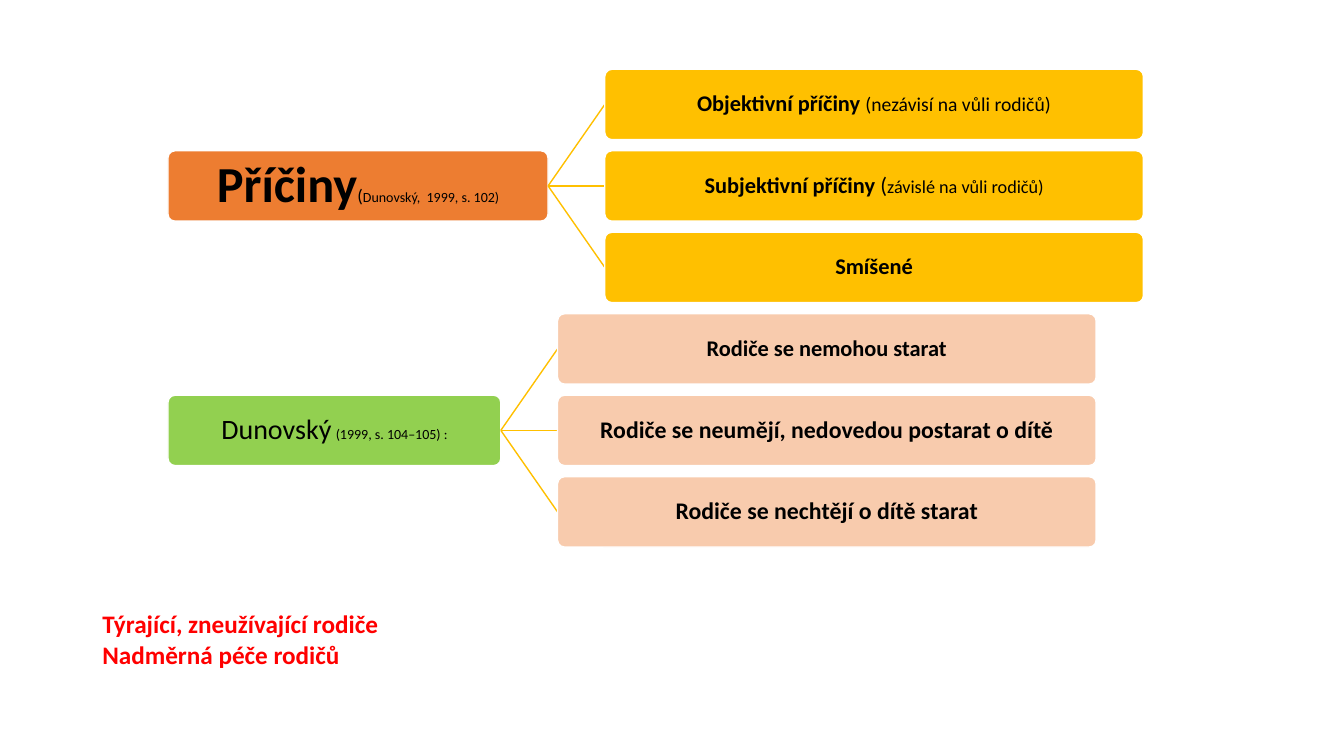
from lxml import etree
from pptx import Presentation
from pptx.dml.color import RGBColor
from pptx.enum.shapes import MSO_CONNECTOR as CONN, MSO_SHAPE as SHAPE
from pptx.enum.text import MSO_ANCHOR as ANCHOR, PP_ALIGN as ALIGN
from pptx.oxml.ns import qn
from pptx.util import Pt

ORANGE = RGBColor(0xED, 0x7D, 0x31)
GOLD = RGBColor(0xFF, 0xC0, 0x00)
GREEN = RGBColor(0x92, 0xD0, 0x50)
PEACH = RGBColor(0xF8, 0xCB, 0xAD)
BLACK = RGBColor(0, 0, 0)
WHITE = RGBColor(0xFF, 0xFF, 0xFF)
RED = RGBColor(0xFF, 0, 0)

TREES = [
    {
        "root": [("Příčiny", 36, True), ("(", 13, False),
                 ("Dunovský,  1999, s. 102)", 10, False)],
        "root_width": 362, "root_fill": ORANGE, "branch_fill": GOLD,
        "branches": [
            [("Objektivní příčiny ", 16, True),
             ("(nezávisí na vůli rodičů)", 14, False)],
            [("Subjektivní příčiny", 16, True), (" (", 16, False),
             ("závislé na vůli rodičů)", 13, False)],
            [("Smíšené", 16, True)],
        ],
    },
    {
        "root": [("Dunovský", 20, False), (" ", 13, False),
                 ("(1999, s. 104–105) :", 10, False)],
        "root_width": 317, "root_fill": GREEN, "branch_fill": PEACH,
        "branches": [
            [("Rodiče se nemohou starat", 16, True)],
            [("Rodiče se neumějí, nedovedou postarat o dítě", 17, True)],
            [("Rodiče se nechtějí o dítě starat", 17, True)],
        ],
    },
]
NOTES = ["Týrající, zneužívající rodiče", "Nadměrná péče rodičů"]

FONT = "Calibri"
LEFT, TOP = 160, 66
BOX_HEIGHT, BRANCH_WIDTH = 67, 513
LINK_WIDTH = 54
ROW_STEP = 388 / 5


def px(n):
    return round(n * 9525)


def add_box(s, x, y, width, fill, runs):
    sp = s.shapes.add_shape(SHAPE.ROUNDED_RECTANGLE, px(x), px(y),
                            px(width), px(BOX_HEIGHT))
    sp.adjustments[0] = 0.1
    sp.shadow.inherit = False
    sp.fill.solid()
    sp.fill.fore_color.rgb = fill
    sp.line.color.rgb = WHITE
    sp.line.width = Pt(1)
    tf = sp.text_frame
    tf.word_wrap = True
    tf.vertical_anchor = ANCHOR.MIDDLE
    tf.margin_left = tf.margin_right = tf.margin_top = tf.margin_bottom = px(1)
    p = tf.paragraphs[0]
    p.alignment = ALIGN.CENTER
    p.line_spacing = 0.9
    p.font.name = FONT
    p.font.color.rgb = BLACK
    for text, size, bold in runs:
        r = p.add_run()
        r.text = text
        r.font.name = FONT
        r.font.color.rgb = BLACK
        r.font.size = Pt(size)
        r.font.bold = bold


def add_link(s, x, y, end_y):
    link = s.shapes.add_connector(CONN.STRAIGHT, px(x), px(y),
                                  px(x + LINK_WIDTH), px(end_y))
    link.line.color.rgb = GOLD
    link.line.width = Pt(1)
    etree.SubElement(link._element.spPr, qn("a:effectLst"))


def add_tree(s, tree, first_row):
    rows = [TOP + (first_row + i) * ROW_STEP for i in range(len(tree["branches"]))]
    root_y = (rows[0] + rows[-1]) / 2
    link_x = LEFT + tree["root_width"]
    half = BOX_HEIGHT / 2
    add_box(s, LEFT, root_y, tree["root_width"], tree["root_fill"], tree["root"])
    for y, runs in zip(rows, tree["branches"]):
        add_link(s, link_x, root_y + half, y + half)
        add_box(s, link_x + LINK_WIDTH, y, BRANCH_WIDTH, tree["branch_fill"], runs)


def add_notes(s):
    tf = s.shapes.add_textbox(px(88), px(575), px(640), px(68)).text_frame
    tf.word_wrap = True
    for i, text in enumerate(NOTES):
        p = tf.add_paragraph() if i else tf.paragraphs[0]
        p.text = text
        p.font.name = FONT
        p.font.size = Pt(18)
        p.font.bold = True
        p.font.color.rgb = RED


def main():
    prs = Presentation()
    prs.slide_width, prs.slide_height = px(1280), px(720)
    s = prs.slides.add_slide(prs.slide_layouts[6])
    first_row = 0
    for tree in TREES:
        add_tree(s, tree, first_row)
        first_row += len(tree["branches"])
    add_notes(s)
    prs.save("out.pptx")


if __name__ == "__main__":
    main()
